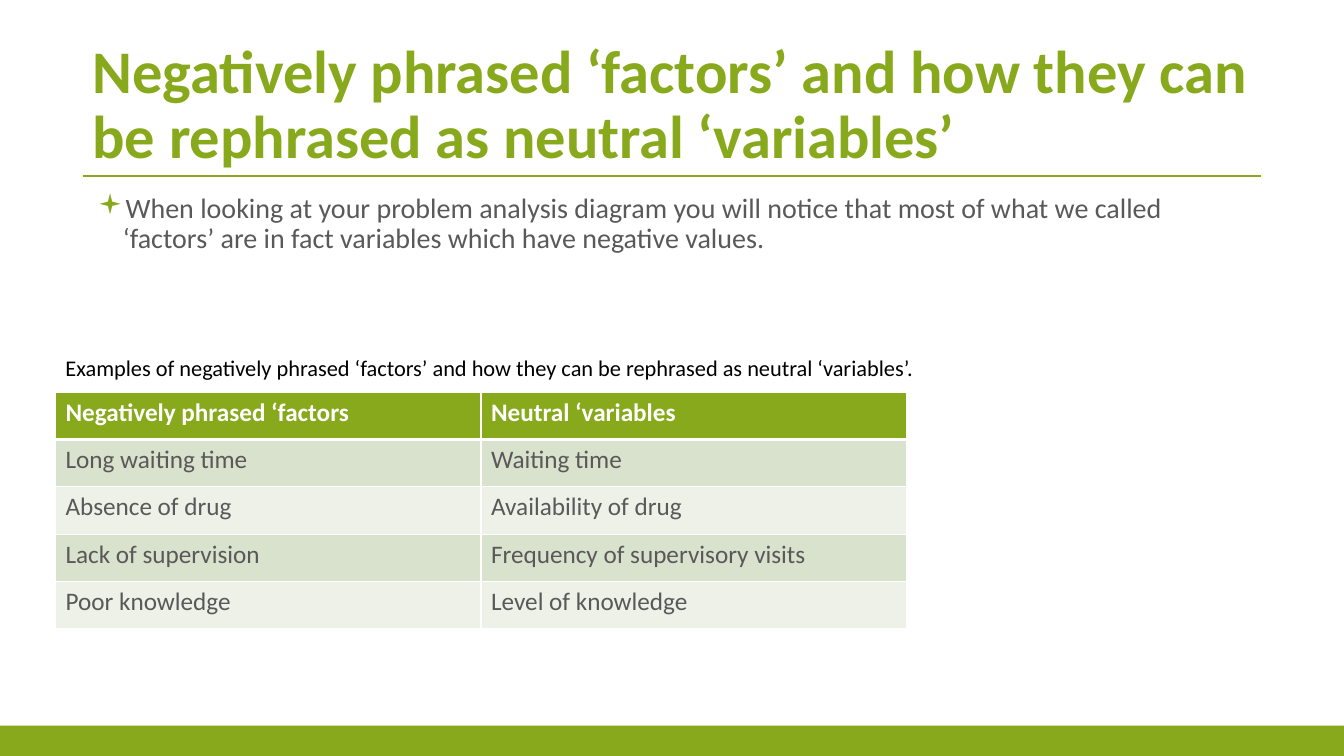
import pptx
import pptx.dml.color
import pptx.enum.shapes
import pptx.enum.text
import pptx.oxml
import pptx.oxml.ns
import pptx.util
from lxml import etree

WIDE, HIGH = 13.33, 7.5
GREEN, GREY, WHITE, BLACK = "87A91B", "595959", "FFFFFF", "000000"
BANDS = ["D9E2CD", "EDF1E8"]
LEFT, SPAN = 6.15, 87.7
ROWS = [
    ("Negatively phrased ‘factors", "Neutral ‘variables"),
    ("Long waiting time", "Waiting time"),
    ("Absence of drug", "Availability of drug"),
    ("Lack of supervision", "Frequency of supervisory visits"),
    ("Poor knowledge", "Level of knowledge"),
]


def color(code):
    return pptx.dml.color.RGBColor.from_string(code)


def place(left, top, width, height):
    """Turn percentages of the slide's size into lengths."""
    sides = (left, WIDE), (top, HIGH), (width, WIDE), (height, HIGH)
    return [pptx.util.Inches(part * side / 100) for part, side in sides]


def tag(parent, name, **attrs):
    node = etree.SubElement(parent, pptx.oxml.ns.qn(name))
    for key, value in attrs.items():
        node.set(key, str(value))
    return node


def write(frame, text, size=18, ink=GREY, bold=False, lead=None, before=None):
    para = frame.paragraphs[0]
    if lead:
        para.line_spacing = lead
    if before:
        para.space_before = pptx.util.Pt(before)
    run = para.add_run()
    run.text = text
    run.font.name = "Calibri"
    run.font.size = pptx.util.Pt(size)
    run.font.bold = bold
    run.font.color.rgb = color(ink)
    return para


def label(slide, area, text, low=False, **style):
    frame = slide.shapes.add_textbox(*place(*area)).text_frame
    frame.word_wrap = True
    if low:
        frame.vertical_anchor = pptx.enum.text.MSO_ANCHOR.BOTTOM
    return write(frame, text, **style)


def bullet(para):
    props = para._p.get_or_add_pPr()
    props.set("marL", str(pptx.util.Inches(0.3)))
    props.set("indent", str(pptx.util.Inches(-0.25)))
    tag(tag(props, "a:buClr"), "a:srgbClr", val=GREEN)
    tag(props, "a:buFont", typeface="Wingdings")
    tag(props, "a:buChar", char="▪")


def bar(slide, area):
    kind = pptx.enum.shapes.MSO_SHAPE.RECTANGLE
    shape = slide.shapes.add_shape(kind, *place(*area))
    shape.shadow.inherit = False
    shape.fill.solid()
    shape.fill.fore_color.rgb = color(GREEN)
    shape.line.fill.background()


def rule(slide, left, top, width):
    x, y, run, _ = place(left, top, width, 0)
    kind = pptx.enum.shapes.MSO_CONNECTOR.STRAIGHT
    line = slide.shapes.add_connector(kind, x, y, x + run, y)
    line.line.color.rgb = color(GREEN)
    line.line.width = pptx.util.Pt(1.5)
    tag(line._element.spPr, "a:effectLst")


def edge(cell, head):
    """Draw white cell borders, with a thick one under the head row."""
    props = cell._tc.get_or_add_tcPr()
    for spot, side in enumerate(("a:lnL", "a:lnR", "a:lnT", "a:lnB")):
        thick = 3 if head and side == "a:lnB" else 1
        line = pptx.oxml.parse_xml(
            f'<{side} {pptx.oxml.ns.nsdecls("a")} w="{pptx.util.Pt(thick)}">'
            f'<a:solidFill><a:srgbClr val="{WHITE}"/></a:solidFill></{side}>')
        props.insert(spot, line)


def grid(slide, area, rows):
    table = slide.shapes.add_table(len(rows), len(rows[0]), *place(*area)).table
    for r, row in enumerate(rows):
        head = r == 0
        for c, text in enumerate(row):
            cell = table.cell(r, c)
            cell.fill.solid()
            cell.fill.fore_color.rgb = color(GREEN if head else BANDS[(r - 1) % 2])
            edge(cell, head)
            write(cell.text_frame, text, ink=WHITE if head else GREY, bold=head)


def main():
    deck = pptx.Presentation()
    deck.slide_width = pptx.util.Inches(WIDE)
    deck.slide_height = pptx.util.Inches(HIGH)
    slide = deck.slides.add_slide(deck.slide_layouts[6])

    bar(slide, (0, 96, 100, 4))
    rule(slide, LEFT, 23.33, SPAN)
    label(slide, (LEFT, 6.67, SPAN, 16.67),
          "Negatively phrased ‘factors’ and how they can be rephrased as "
          "neutral ‘variables’",
          low=True, size=43.2, ink=GREEN, bold=True, lead=0.9)
    bullet(label(slide, (LEFT, 25, SPAN, 15),
                 "When looking at your problem analysis diagram you will notice "
                 "that most of what we called ‘factors’ are in fact variables "
                 "which have negative values.",
                 size=20, lead=0.9, before=18))
    grid(slide, (4.13, 51.87, 63.32, 31.33), ROWS)
    label(slide, (4.13, 46.13, 68.7, 4.93),
          "Examples of negatively phrased ‘factors’ and how they can be "
          "rephrased as neutral ‘variables’.",
          size=16, ink=BLACK)
    deck.save("out.pptx")


if __name__ == "__main__":
    main()
